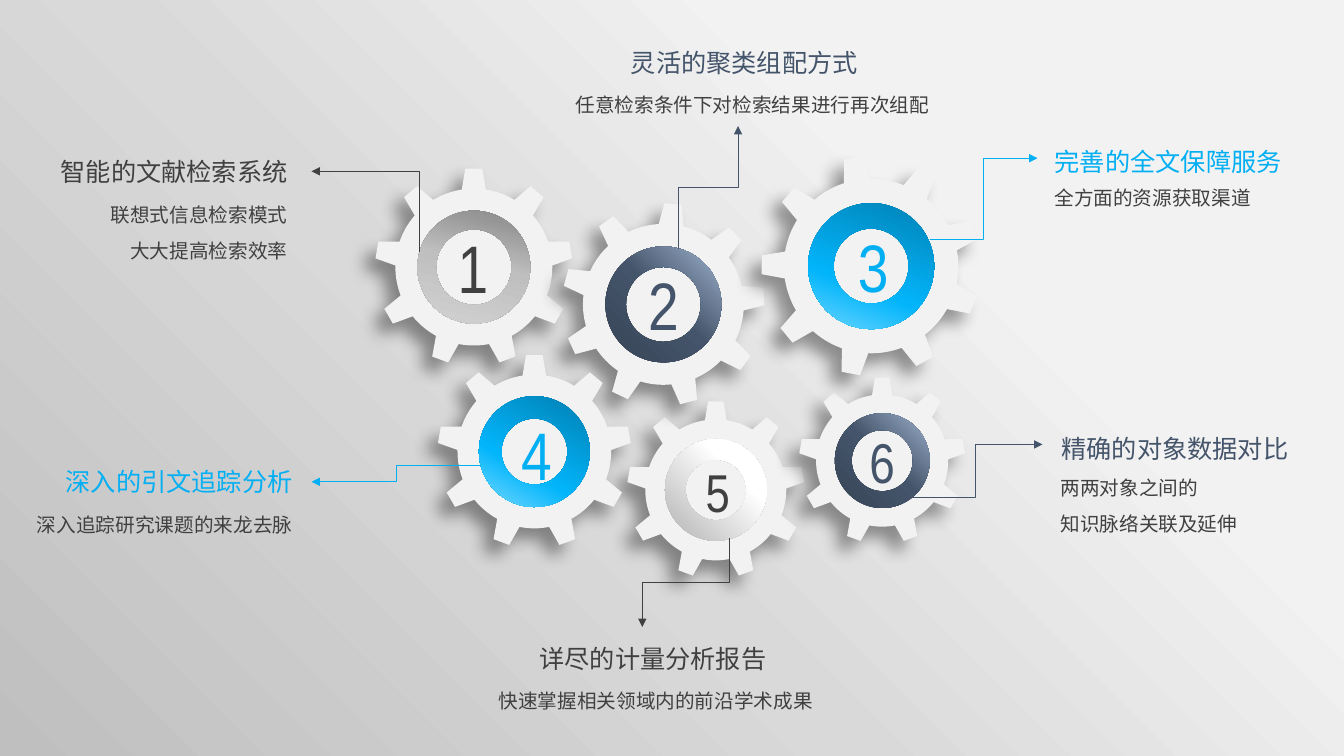
from dataclasses import dataclass

from lxml.etree import SubElement
from pptx import Presentation
from pptx.dml.color import RGBColor
from pptx.enum.shapes import MSO_CONNECTOR, MSO_SHAPE
from pptx.enum.text import MSO_AUTO_SIZE, PP_ALIGN
from pptx.oxml import parse_xml
from pptx.oxml.ns import nsdecls, qn
from pptx.util import Inches, Pt

HUES = {"dark": "404040", "navy": "44546A", "blue": "02AFF3", "gear": "F2F2F2"}
CORNER = '<a:path path="circle"><a:fillToRect l="100000" b="100000"/></a:path>'
SLANT = '<a:lin ang="18900000" scaled="0"/>'
LEFT, MID, RIGHT = PP_ALIGN.LEFT, PP_ALIGN.CENTER, PP_ALIGN.RIGHT
HAN = "Noto Sans CJK SC"


@dataclass
class Blend:
    stops: dict[int, str]
    shade: str


BLENDS = {
    "back": Blend({9: "F2F2F2", 29: "F2F2F2", 59: "D9D9D9", 100: "BFBFBF"}, CORNER),
    "white": Blend({0: "FFFFFF", 35: "FFFFFF", 100: "A6A6A6"}, CORNER),
    "grey": Blend({0: "6F6F6F", 23: "969696", 48: "BFBFBF", 100: "D9D9D9"}, SLANT),
    "navy": Blend({0: "D6DCE5", 24: "8497B0", 49: "44546A", 100: "333F50"}, CORNER),
    "blue": Blend({0: "0175A3", 61: "02B5FB", 85: "61D2FE"}, SLANT),
}


@dataclass
class Gear:
    x: float
    y: float
    size: float
    turn: float
    ring: float
    spin: float
    band: float
    blend: str
    digit: str
    hue: str
    points: int = 48
    shift: float = 0
    drop: float = 0


@dataclass
class Note:
    x: float
    y: float
    wide: float
    high: float
    lines: tuple[str, ...]
    align: PP_ALIGN
    hue: str = "dark"
    points: int = 14
    space: float = 1.5
    font: str = HAN
    wrap: bool = True


@dataclass
class Arrow:
    start: tuple[float, float]
    end: tuple[float, float]
    hue: str
    upright: bool = False
    bend: str = "bentConnector3"


GEARS = [
    Gear(7.1, 4.86, 1.77, 0, 1.01, 165, 0.202, "white", "5", "dark", 38, 0.02, 0.01),
    Gear(4.7, 2.65, 1.97, 0, 1.12, 150, 0.166, "grey", "1", "dark", shift=-0.01),
    Gear(6.58, 3.02, 2.02, 5.5, 1.15, 150.4, 0.177, "navy", "2", "navy"),
    Gear(5.3, 4.48, 1.93, 0, 1.1, 165, 0.202, "blue", "4", "blue", shift=0.02, drop=0.03),
    Gear(8.75, 4.57, 1.66, 0, 0.94, 144.8, 0.177, "navy", "6", "navy", 40),
    Gear(8.64, 2.64, 2.19, 350.7, 1.25, 155.7, 0.202, "blue", "3", "blue", shift=0.02),
]


def head(x: float, y: float, text: str, hue: str, align: PP_ALIGN) -> Note:
    """Describe a heading."""
    return Note(x, y, 2.47, 0.4, (text,), align, hue, 18, 1, wrap=False)


NOTES = [
    head(0.48, 1.5, "智能的文献检索系统", "dark", RIGHT),
    Note(0.65, 1.85, 2.3, 0.77, ("联想式信息检索模式", "大大提高检索效率"), RIGHT),
    head(6.16, 0.42, "灵活的聚类组配方式", "navy", LEFT),
    Note(5.61, 0.76, 4.06, 0.45, ("任意检索条件下对检索结果进行再次组配",), LEFT),
    head(10.34, 1.4, "完善的全文保障服务", "blue", RIGHT),
    Note(10.36, 1.68, 2.27, 0.45, ("全方面的资源获取渠道",), LEFT),
    head(0.53, 4.58, "深入的引文追踪分析", "blue", RIGHT),
    Note(0.09, 4.92, 2.91, 0.42, ("深入追踪研究课题的来龙去脉",), RIGHT),
    head(5.23, 6.33, "详尽的计量分析报告", "dark", RIGHT),
    Note(4.64, 6.67, 3.73, 0.42, ("快速掌握相关领域内的前沿学术成果",), MID),
    head(10.43, 4.25, "精确的对象数据对比", "navy", LEFT),
    Note(10.42, 4.56, 2.27, 0.81, ("两两对象之间的", "知识脉络关联及延伸"), LEFT),
]

ARROWS = [
    Arrow((4.16, 2.5), (3.09, 1.7), "dark", True, "bentConnector2"),
    Arrow((6.73, 2.47), (7.32, 1.25), "navy", True),
    Arrow((9.22, 2.38), (10.29, 1.57), "blue"),
    Arrow((4.77, 4.62), (3.09, 4.78), "blue"),
    Arrow((7.23, 5.34), (6.37, 6.22), "dark", True),
    Arrow((9.01, 4.93), (10.34, 4.41), "navy"),
]


def tint(hue: str) -> RGBColor:
    """Look up a named colour."""
    return RGBColor.from_string(HUES[hue])


def blend_fill(fill, root, name: str) -> None:
    """Give a fill the stops and shade of a named blend."""
    blend = BLENDS[name]
    stops = "".join(
        f'<a:gs pos="{pos * 1000}"><a:srgbClr val="{hue}"/></a:gs>'
        for pos, hue in blend.stops.items()
    )
    fill.gradient()
    old = next(root.iter(qn("a:gradFill")))
    old.getparent().replace(old, parse_xml(
        f'<a:gradFill {nsdecls("a")} rotWithShape="1"><a:gsLst>{stops}</a:gsLst>'
        f'{blend.shade}</a:gradFill>'))


def add_round(slide, kind: MSO_SHAPE, x: float, y: float, size: float, turn: float):
    """Add a square-framed shape around a centre."""
    shape = slide.shapes.add_shape(
        kind, Inches(x - size / 2), Inches(y - size / 2), Inches(size), Inches(size))
    shape.rotation = turn
    shape.shadow.inherit = False
    shape.line.fill.background()
    return shape


def draw_gear(slide, gear: Gear) -> None:
    """Draw a gear with its shadow and ring."""
    wheel = add_round(slide, MSO_SHAPE.GEAR_9, gear.x, gear.y, gear.size, gear.turn)
    wheel.adjustments[0], wheel.adjustments[1] = 0.105, 0.018
    wheel.fill.solid()
    wheel.fill.fore_color.rgb = tint("gear")
    glow = next(wheel.element.iter(qn("a:effectLst")))
    glow.append(parse_xml(
        f'<a:outerShdw {nsdecls("a")} blurRad="{Pt(12)}" dist="{Pt(11)}" dir="8100000" '
        'algn="tr" rotWithShape="0"><a:srgbClr val="000000"><a:alpha val="40000"/>'
        '</a:srgbClr></a:outerShdw>'))
    ring = add_round(slide, MSO_SHAPE.DONUT, gear.x, gear.y, gear.ring, gear.spin)
    ring.adjustments[0] = gear.band
    blend_fill(ring.fill, ring.element, gear.blend)


def digit_note(gear: Gear) -> Note:
    """Describe the digit on a gear."""
    wide, high = 0.54, gear.points * 0.019
    return Note(gear.x + gear.shift - wide / 2, gear.y + gear.drop - high / 2, wide, high,
                (gear.digit,), MID, gear.hue, gear.points, 1, "Arial Narrow", False)


def draw_note(slide, note: Note) -> None:
    """Draw a block of text."""
    box = slide.shapes.add_textbox(*map(Inches, (note.x, note.y, note.wide, note.high)))
    frame = box.text_frame
    frame.word_wrap = note.wrap
    frame.auto_size = MSO_AUTO_SIZE.SHAPE_TO_FIT_TEXT
    frame.text = "\n".join(note.lines)
    for para in frame.paragraphs:
        para.alignment = note.align
        para.line_spacing = note.space
        para.font.size = Pt(note.points)
        para.font.color.rgb = tint(note.hue)
        para.font.name = note.font
    for props in box.element.iter(qn("a:defRPr")):
        SubElement(props, qn("a:ea"), typeface=note.font)


def draw_arrow(slide, arrow: Arrow) -> None:
    """Draw an elbow arrow, turned a quarter if it starts upright."""
    (x1, y1), (x2, y2) = arrow.start, arrow.end
    dx, dy = x2 - x1, y2 - y1
    if arrow.upright:
        dx, dy = dy, -dx
    x, y = (x1 + x2) / 2, (y1 + y2) / 2
    ends = (x - dx / 2, y - dy / 2, x + dx / 2, y + dy / 2)
    link = slide.shapes.add_connector(MSO_CONNECTOR.ELBOW, *map(Inches, ends))
    link.line.color.rgb = tint(arrow.hue)
    link.line.width = Pt(0.5)
    root = link.element
    SubElement(next(root.iter(qn("a:ln"))), qn("a:tailEnd"), type="triangle")
    SubElement(next(root.iter(qn("p:spPr"))), qn("a:effectLst"))
    next(root.iter(qn("a:prstGeom"))).set("prst", arrow.bend)
    if arrow.upright:
        next(root.iter(qn("a:xfrm"))).set("rot", "5400000")


def main() -> None:
    """Build the slide and save it."""
    deck = Presentation()
    deck.slide_width, deck.slide_height = Inches(13.33), Inches(7.5)
    slide = deck.slides.add_slide(deck.slide_layouts[6])
    blend_fill(slide.background.fill, slide.element, "back")
    for gear in GEARS:
        draw_gear(slide, gear)
    for note in [*map(digit_note, GEARS), *NOTES]:
        draw_note(slide, note)
    for arrow in ARROWS:
        draw_arrow(slide, arrow)
    deck.save("out.pptx")


if __name__ == "__main__":
    main()
